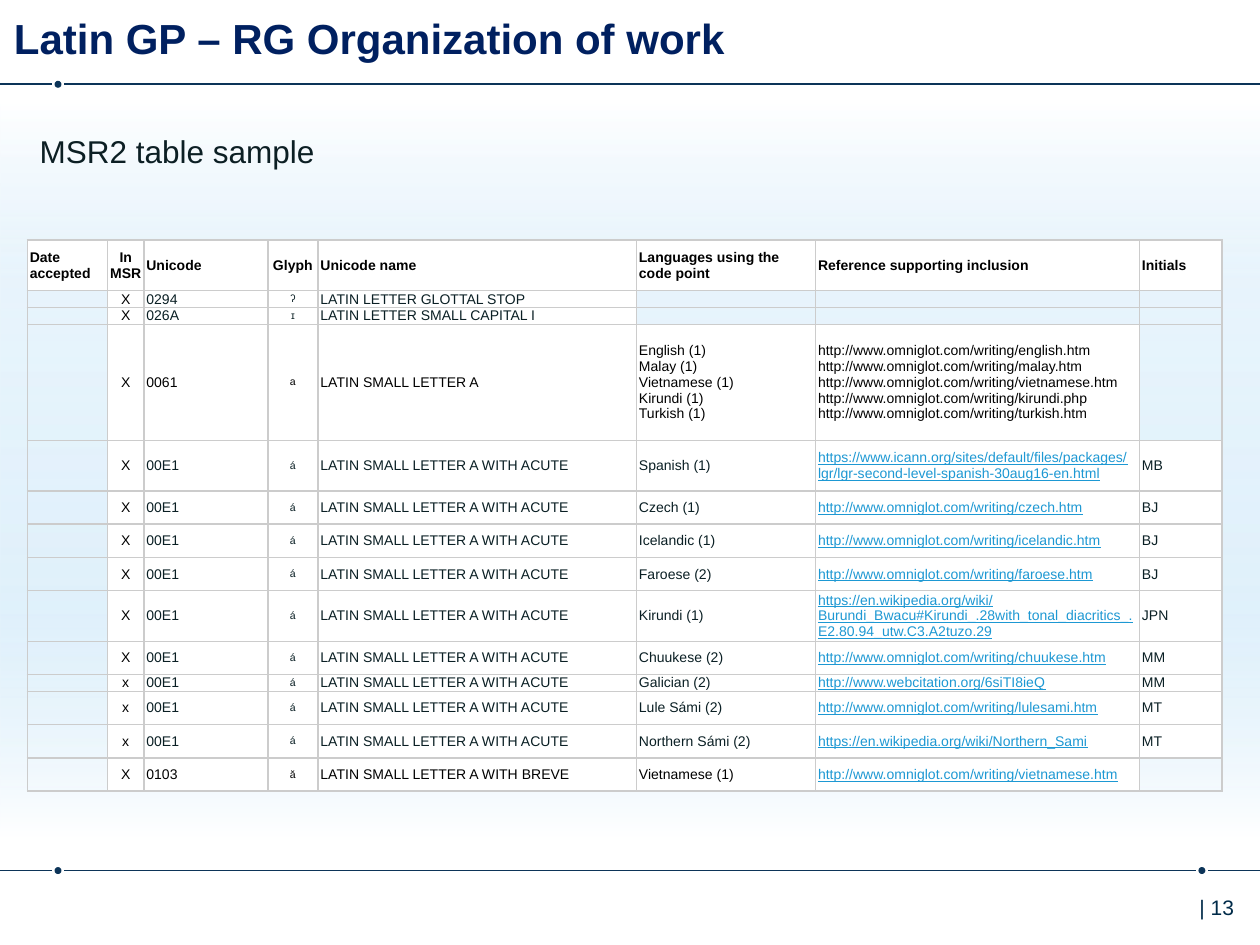
from lxml.etree import SubElement
from pptx import Presentation
from pptx.dml.color import RGBColor
from pptx.enum.shapes import MSO_CONNECTOR, MSO_SHAPE
from pptx.enum.text import MSO_ANCHOR, PP_ALIGN
from pptx.oxml import parse_xml
from pptx.oxml.ns import nsdecls, qn
from pptx.util import Cm, Pt

NAVY, INK, BLACK, WHITE = "0C3458", "0A1F24", "000000", "FFFFFF"
LINK, GRID, SKY = "1D98D3", "CCCCCC", "CDE8F9"


def rgb(color):
    return RGBColor.from_string(color)


def write(tf, text, size=8, color=BLACK, bold=False, underline=False, align=PP_ALIGN.LEFT):
    p = tf.paragraphs[0]
    p.alignment = align
    for i, line in enumerate(text.split("\n")):
        if i:
            p.add_line_break()
        r = p.add_run()
        r.text = line
        r.font.name, r.font.size, r.font.bold = "Arial", Pt(size), bold
        r.font.underline = underline
        r.font.color.rgb = rgb(color)
    return p


prs = Presentation()
prs.slide_width, prs.slide_height = Cm(25.4), Cm(19.05)
s = prs.slides.add_slide(prs.slide_layouts[5])

# Sky panel, fading to white at top and bottom
panel = s.shapes.add_shape(MSO_SHAPE.RECTANGLE, 0, Cm(2.08), Cm(25.4), Cm(14.86))
panel.shadow.inherit = False
panel.line.fill.background()
panel.fill.background()
stops = "".join(
    f'<a:gs pos="{pos}000"><a:srgbClr val="{color}"><a:alpha val="{alpha}000"/></a:srgbClr></a:gs>'
    for pos, color, alpha in [(0, WHITE, 75), (24, SKY, 45), (69, SKY, 62), (100, WHITE, 100)])
spPr = panel._element.spPr
spPr.replace(spPr.find(qn("a:noFill")), parse_xml(
    f'<a:gradFill rotWithShape="1" {nsdecls("a")}><a:gsLst>{stops}</a:gsLst>'
    '<a:lin ang="5400000" scaled="0"/></a:gradFill>'))

# Rules with dots at top and bottom
for x1, x2, y in [(0, 1.04, 1.7), (1.3, 25.4, 1.7),
                  (0, 1.04, 17.55), (1.3, 24.1, 17.55), (24.36, 25.4, 17.55)]:
    rule = s.shapes.add_connector(MSO_CONNECTOR.STRAIGHT, Cm(x1), Cm(y), Cm(x2), Cm(y))
    rule.line.color.rgb = rgb(NAVY)
    rule.line.width = Pt(1)
    SubElement(rule._element.spPr, qn("a:effectLst"))
for x, y in [(1.17, 1.7), (1.17, 17.55), (24.23, 17.55)]:
    dot = s.shapes.add_shape(MSO_SHAPE.OVAL, Cm(x - 0.07), Cm(y - 0.07), Cm(0.14), Cm(0.14))
    dot.shadow.inherit = False
    dot.fill.solid()
    dot.fill.fore_color.rgb = rgb(NAVY)
    dot.line.fill.background()

# Title
title = s.shapes.title
title.left, title.top, title.width, title.height = 0, Cm(0.13), Cm(25.4), Cm(1.25)
tf = title.text_frame
tf.margin_left, tf.margin_right = Cm(0.28), 0
tf.margin_top = tf.margin_bottom = Cm(0.13)
tf.vertical_anchor = MSO_ANCHOR.MIDDLE
write(tf, "Latin GP – RG Organization of work", size=24, color="002060", bold=True)

# Subtitle and page number
for x, y, w, h, text, size, color in [
        (0.55, 2.54, 22.89, 2.24, "MSR2 table sample", 18, "0C1F24"),
        (23.93, 17.9, 1.47, 1.02, "| 13", 12, "002B49")]:
    tf = s.shapes.add_textbox(Cm(x), Cm(y), Cm(w), Cm(h)).text_frame
    tf.word_wrap = True
    write(tf, text, size=size, color=color)

# Table data
HEADER = ["Date accepted", "In MSR", "Unicode", "Glyph", "Unicode name",
          "Languages using the code point", "Reference supporting inclusion", "Initials"]
SITE = "http://www.omniglot.com/writing/"
ACUTE = ("00E1", "á", "LATIN SMALL LETTER A WITH ACUTE")
SOURCES = "\n".join(SITE + page for page in [
    "english.htm", "malay.htm", "vietnamese.htm", "kirundi.php", "turkish.htm"])
rows = [
    ("X", "0294", "ʔ", "LATIN LETTER GLOTTAL STOP", "", "", ""),
    ("X", "026A", "ɪ", "LATIN LETTER SMALL CAPITAL I", "", "", ""),
    ("X", "0061", "a", "LATIN SMALL LETTER A",
     "English (1)\nMalay (1)\nVietnamese (1)\nKirundi (1)\nTurkish (1)", SOURCES, ""),
    ("X", *ACUTE, "Spanish (1)", "https://www.icann.org/sites/default/files/packages/"
     "lgr/lgr-second-level-spanish-30aug16-en.html", "MB"),
    ("X", *ACUTE, "Czech (1)", SITE + "czech.htm", "BJ"),
    ("X", *ACUTE, "Icelandic (1)", SITE + "icelandic.htm", "BJ"),
    ("X", *ACUTE, "Faroese (2)", SITE + "faroese.htm", "BJ"),
    ("X", *ACUTE, "Kirundi (1)", "https://en.wikipedia.org/wiki/Burundi_Bwacu"
     "#Kirundi_.28with_tonal_diacritics_.E2.80.94_utw.C3.A2tuzo.29", "JPN"),
    ("X", *ACUTE, "Chuukese (2)", SITE + "chuukese.htm", "MM"),
    ("x", *ACUTE, "Galician (2)", "http://www.webcitation.org/6siTI8ieQ", "MM"),
    ("x", *ACUTE, "Lule Sámi (2)", SITE + "lulesami.htm", "MT"),
    ("x", *ACUTE, "Northern Sámi (2)", "https://en.wikipedia.org/wiki/Northern_Sami", "MT"),
    ("X", "0103", "ă", "LATIN SMALL LETTER A WITH BREVE", "Vietnamese (1)",
     SITE + "vietnamese.htm", ""),
]
data = [HEADER] + [("", *row) for row in rows]
widths = [1.62, 0.73, 2.5, 1.01, 6.42, 3.61, 6.53, 1.66]
heights = [1.02, 0.33, 0.33, 2.34, 1.02, 0.67, 0.67, 0.67, 1.02, 0.67, 0.33, 0.67, 0.67, 0.67]

# Table
table = s.shapes.add_table(len(data), len(widths), Cm(0.55), Cm(4.84),
                           Cm(sum(widths)), Cm(sum(heights))).table
table.first_row = table.horz_banding = False
for column, w in zip(table.columns, widths):
    column.width = Cm(w)
for row, h in zip(table.rows, heights):
    row.height = Cm(h)

for i, values in enumerate(data):
    for j, text in enumerate(values):
        cell = table.cell(i, j)
        cell.margin_left = cell.margin_right = Cm(0.05)
        cell.margin_top = cell.margin_bottom = 0
        cell.vertical_anchor = MSO_ANCHOR.MIDDLE
        for side in ("lnL", "lnR", "lnT", "lnB"):
            cell._tc.get_or_add_tcPr().append(parse_xml(
                f'<a:{side} w="12700" {nsdecls("a")}><a:solidFill>'
                f'<a:srgbClr val="{GRID}"/></a:solidFill></a:{side}>'))
        if not text:
            cell.fill.background()
            SubElement(cell.text_frame.paragraphs[0]._p, qn("a:endParaRPr"), sz="600")
            continue
        cell.fill.solid()
        cell.fill.fore_color.rgb = rgb(WHITE)
        is_link = i > 0 and j == 6 and text != SOURCES
        plain = BLACK if i == 0 or j == 1 or values[2] in ("0061", "0103") else INK
        write(cell.text_frame, text, size=6 if i and j == 3 else 8,
              color=LINK if is_link else plain, bold=i == 0, underline=is_link,
              align=PP_ALIGN.CENTER if j in (1, 3) else PP_ALIGN.LEFT)

prs.save("out.pptx")
